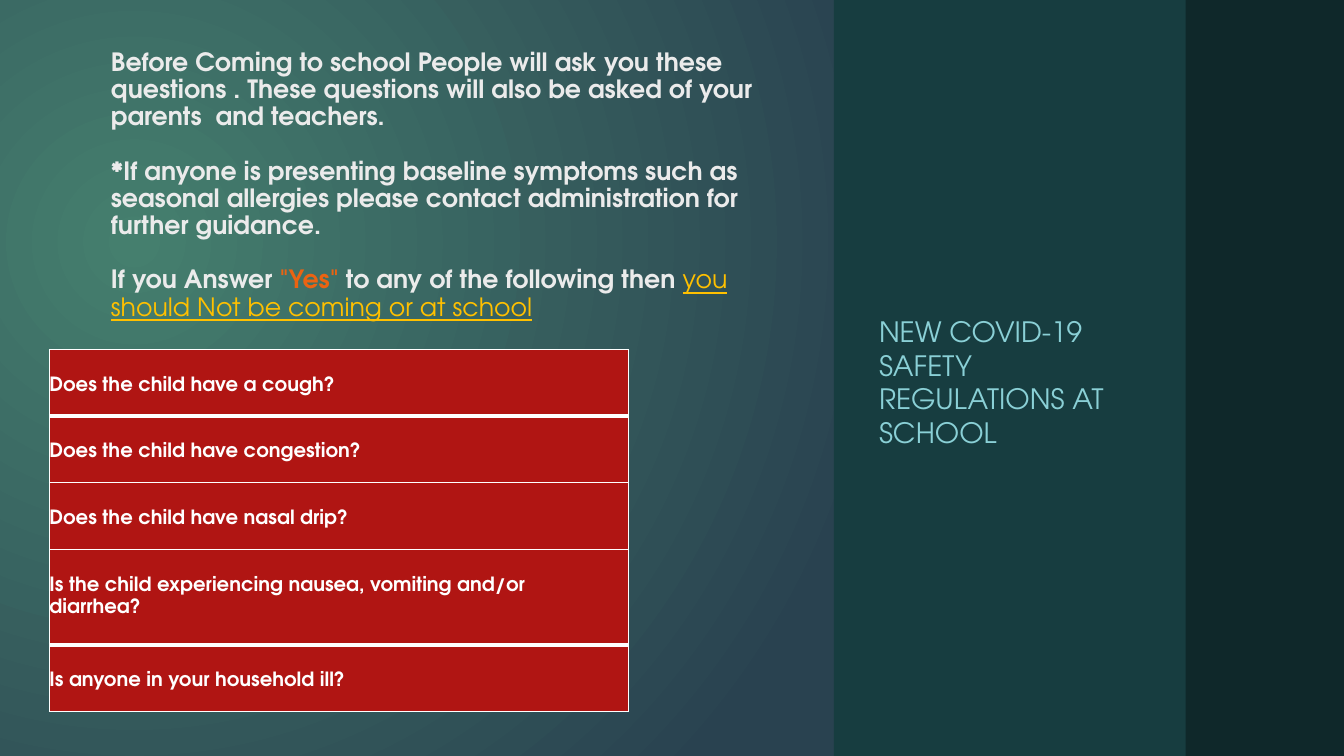
from lxml import etree
from pptx import Presentation
from pptx.dml.color import RGBColor
from pptx.enum.shapes import MSO_SHAPE
from pptx.enum.text import MSO_ANCHOR, MSO_AUTO_SIZE, PP_ALIGN
from pptx.oxml.ns import qn
from pptx.util import Inches, Pt

RECT = MSO_SHAPE.RECTANGLE
MIDDLE = MSO_ANCHOR.MIDDLE
LEFT = PP_ALIGN.LEFT
NO_FIT = MSO_AUTO_SIZE.NONE
FACE = "TeX Gyre Adventor"
TITLE_ONLY = 5
WIDE, HIGH = 13.33, 7.5
COLORS = {
    "glow": "457F6E", "dusk": "294250", "panel": "173D40", "edge": "0F282A",
    "text": "EBEBEB", "yes": "EA6312", "warn": "FFC000", "side": "8AD0D6",
    "red": "B01513", "white": "FFFFFF",
}


def color(name):
    return RGBColor.from_string(COLORS[name])


def style(font, size, tint, bold=False):
    font.name, font.size, font.bold = FACE, Pt(size), bold
    font.color.rgb = color(tint)


deck = Presentation()
deck.slide_width, deck.slide_height = Inches(WIDE), Inches(HIGH)
slide = deck.slides.add_slide(deck.slide_layouts[TITLE_ONLY])
shapes = slide.shapes

# Background: round glow near the left edge
back = slide.background.fill
back.gradient()
for stop, name in zip(back.gradient_stops, ("glow", "dusk")):
    stop.color.rgb = color(name)
grad = slide._element.find(".//" + qn("a:gradFill"))
grad.remove(grad.find(qn("a:lin")))
round_path = etree.SubElement(grad, qn("a:path"), path="circle")
etree.SubElement(round_path, qn("a:fillToRect"),
                 l="45000", t="65000", r="125000", b="100000")

# Title: paragraphs of (text, colour, bold, underline) runs
intro = [
    [("Before Coming to school People will ask you these questions . These "
      "questions will also be asked of your parents  and teachers.",
      "text", True, False)],
    [("*If anyone is presenting baseline symptoms such as seasonal allergies "
      "please contact administration for further guidance.",
      "text", True, False)],
    [("If you Answer ", "text", True, False),
     ('"Yes" ', "yes", True, False),
     ("to any of the following then ", "text", True, False),
     ("you should Not be coming or at school", "warn", False, True)],
]
title = shapes.title
title.left, title.top = Inches(1), Inches(0.35)
title.width, title.height = Inches(6.58), Inches(2.98)
frame = title.text_frame
frame.word_wrap, frame.auto_size = True, NO_FIT
frame.vertical_anchor = MIDDLE
for i, runs in enumerate(intro):
    para = frame.add_paragraph() if i else frame.paragraphs[0]
    para.alignment, para.line_spacing = LEFT, 0.9
    para.space_before = Pt(19.4 if i else 0)
    for text, tint, bold, under in runs:
        run = para.add_run()
        run.text = text
        style(run.font, 18, tint, bold)
        run.font.underline = under

# Side panels
for name, left, width in (("panel", 8.27, 3.52), ("edge", 11.76, WIDE - 11.76)):
    panel = shapes.add_shape(RECT, Inches(left), 0, Inches(width), Inches(HIGH))
    panel.shadow.inherit = False
    panel.fill.solid()
    panel.fill.fore_color.rgb = color(name)
    panel.line.fill.background()

side = shapes.add_textbox(Inches(8.62), Inches(1.16), Inches(2.83), Inches(5.26))
frame = side.text_frame
frame.word_wrap, frame.auto_size = True, NO_FIT
frame.vertical_anchor = MIDDLE
para = frame.paragraphs[0]
para.text = "NEW COVID-19 SAFETY REGULATIONS AT SCHOOL"
style(para.font, 20, "side")

# Question table: (lines, row height, top border, bottom border)
rows = [
    (["Does the child have a cough?"], 0.66, 1, 3),
    (["Does the child have congestion?"], 0.66, 3, 1),
    (["Does the child have nasal drip?"], 0.66, 1, 1),
    (["Is the child experiencing nausea, vomiting and/or", "diarrhea?"],
     0.95, 1, 3),
    (["Is anyone in your household ill?"], 0.66, 3, 1),
]
table = shapes.add_table(len(rows), 1, Inches(0.49), Inches(3.47),
                         Inches(5.74), Inches(3.59)).table
table.first_row = table.horz_banding = False
for i, (lines, height, top, bottom) in enumerate(rows):
    table.rows[i].height = Inches(height)
    cell = table.cell(i, 0)
    cell.margin_left = cell.margin_right = 0
    cell.margin_top = cell.margin_bottom = 0
    cell.vertical_anchor = MIDDLE
    cell.fill.solid()
    cell.fill.fore_color.rgb = color("red")
    cell.text = "\n".join(lines)
    for para in cell.text_frame.paragraphs:
        style(para.font, 14, "white", True)
    if len(lines) == 1:
        para.line_spacing = Pt(17.1)
    else:
        para.line_spacing = Pt(16.1)
    props = cell._tc.get_or_add_tcPr()
    sides = (("lnL", 1), ("lnR", 1), ("lnT", top), ("lnB", bottom))
    for place, (tag, points) in enumerate(sides):
        line = etree.Element(qn("a:" + tag), w=str(Pt(points)))
        fill = etree.SubElement(line, qn("a:solidFill"))
        etree.SubElement(fill, qn("a:srgbClr"), val=COLORS["white"])
        props.insert(place, line)

deck.save("out.pptx")
